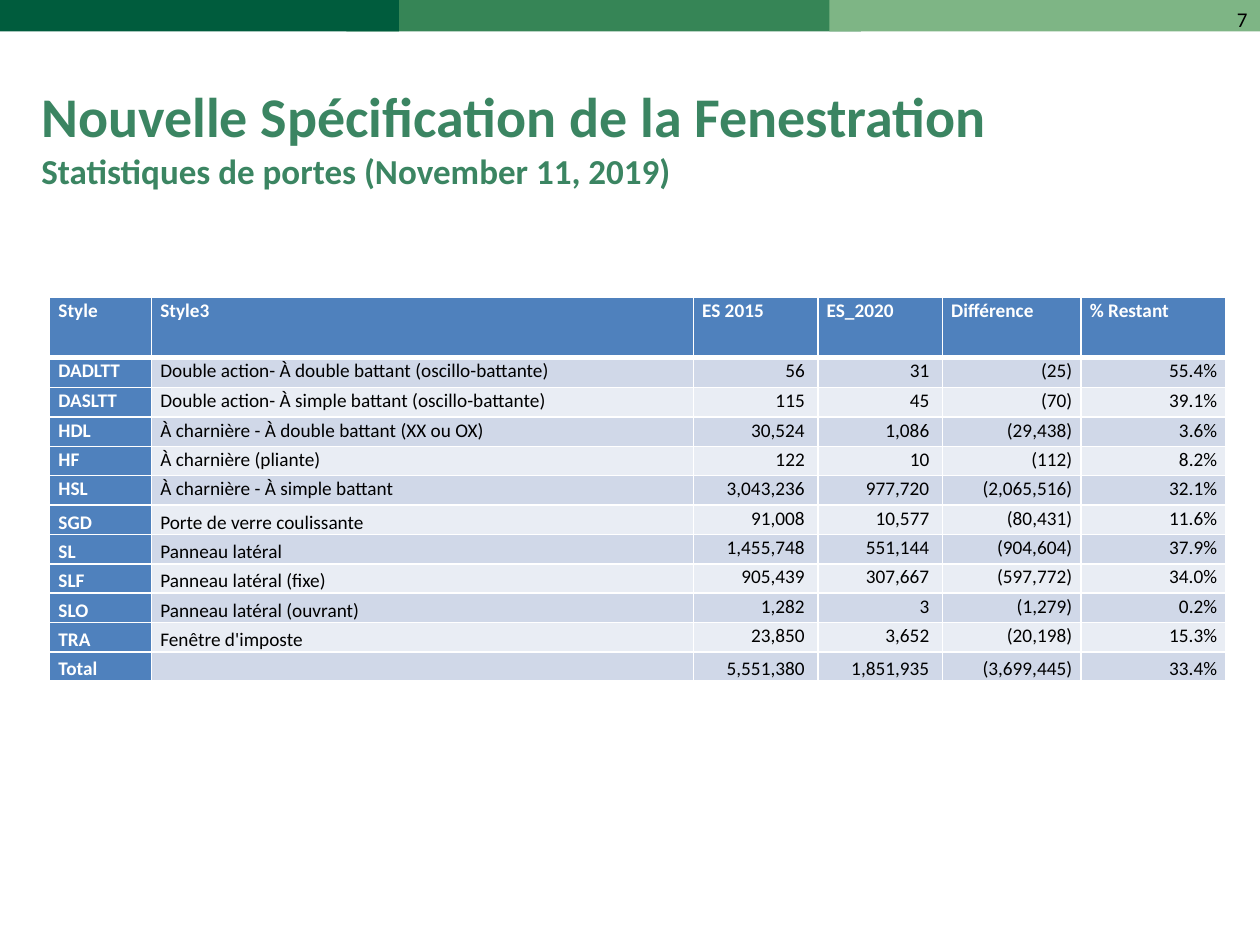
from lxml.etree import SubElement
from pptx import Presentation
from pptx.dml.color import RGBColor
from pptx.enum.shapes import MSO_SHAPE as Shape
from pptx.enum.text import MSO_ANCHOR as Anchor, PP_ALIGN as Align
from pptx.oxml.ns import qn
from pptx.util import Pt

COLORS = {
    "dark green": "005C3D", "mid green": "368556", "light green": "7EB585",
    "title": "3B8562", "header": "4F81BD", "odd": "D0D8E8", "even": "E9EDF4",
    "white": "FFFFFF", "black": "000000",
}
BANDS = [("mid green", 198, 294), ("dark green", 0, 228), ("light green", 474, 246)]
COLUMN_WIDTHS = [58.2, 309.6, 71.2, 71.2, 79.2, 82.8]
HEADINGS = ["Style", "Style3", "ES 2015", "ES_2020", "Différence", "% Restant"]
DOORS = [
    ["DADLTT", "Double action- À double battant (oscillo-battante)", "56", "31", "(25)", "55.4%"],
    ["DASLTT", "Double action- À simple battant (oscillo-battante)", "115", "45", "(70)", "39.1%"],
    ["HDL", "À charnière - À double battant (XX ou OX)", "30,524", "1,086", "(29,438)", "3.6%"],
    ["HF", "À charnière (pliante)", "122", "10", "(112)", "8.2%"],
    ["HSL", "À charnière - À simple battant", "3,043,236", "977,720", "(2,065,516)", "32.1%"],
    ["SGD", "Porte de verre coulissante", "91,008", "10,577", "(80,431)", "11.6%"],
    ["SL", "Panneau latéral", "1,455,748", "551,144", "(904,604)", "37.9%"],
    ["SLF", "Panneau latéral (fixe)", "905,439", "307,667", "(597,772)", "34.0%"],
    ["SLO", "Panneau latéral (ouvrant)", "1,282", "3", "(1,279)", "0.2%"],
    ["TRA", "Fenêtre d'imposte", "23,850", "3,652", "(20,198)", "15.3%"],
    ["Total", "", "5,551,380", "1,851,935", "(3,699,445)", "33.4%"],
]
FIRST_BOTTOM_ROW = 6
TOTAL_ROW = len(DOORS)


def rgb(color):
    return RGBColor.from_string(COLORS[color])


def apply_format(target, formats):
    for attribute, value in formats.items():
        setattr(target, attribute, value)


def add_run(paragraph, words, size, color, bold=False):
    run = paragraph.add_run()
    run.text = words
    apply_format(run.font, {"name": "Calibri", "size": Pt(size), "bold": bold})
    run.font.color.rgb = rgb(color)


def add_band(slide, color, left, width):
    band = slide.shapes.add_shape(Shape.RECTANGLE, Pt(left), 0, Pt(width), Pt(18))
    band.shadow.inherit = False
    band.fill.solid()
    band.fill.fore_color.rgb = rgb(color)
    band.line.fill.background()


def add_text(slide, bounds, align, anchor, lines):
    frame = slide.shapes.add_textbox(*map(Pt, bounds)).text_frame
    apply_format(frame, {"word_wrap": True, "vertical_anchor": anchor})
    paragraph = frame.paragraphs[0]
    paragraph.alignment = align
    for index, line in enumerate(lines):
        if index:
            paragraph.add_line_break()
        add_run(paragraph, *line)


def add_borders(cell, row):
    widths = {"lnL": 1, "lnR": 1, "lnT": 3 if row == 1 else 1, "lnB": 3 if row == 0 else 1}
    properties = cell._tc.get_or_add_tcPr()
    for side, width in widths.items():
        border = SubElement(properties, qn(f"a:{side}"), w=str(Pt(width)))
        fill = SubElement(border, qn("a:solidFill"))
        SubElement(fill, qn("a:srgbClr"), val=COLORS["white"])


def fill_cell(cell, words, row, column):
    is_heading = row == 0 or column == 0
    is_number = row > 0 and column > 1
    at_bottom = row == TOTAL_ROW or (row >= FIRST_BOTTOM_ROW and not is_number)
    apply_format(cell, {
        "margin_left": Pt(5),
        "margin_right": Pt(7.5 if is_number and column < 4 else 5),
        "margin_top": 0,
        "margin_bottom": 0,
        "vertical_anchor": Anchor.BOTTOM if at_bottom else Anchor.TOP,
    })
    add_borders(cell, row)
    cell.fill.solid()
    cell.fill.fore_color.rgb = rgb("header" if is_heading else "odd" if row % 2 else "even")
    paragraph = cell.text_frame.paragraphs[0]
    apply_format(paragraph, {
        "alignment": Align.RIGHT if is_number else Align.LEFT,
        "line_spacing": 1.07,
    })
    if words:
        add_run(paragraph, words, 11, "white" if is_heading else "black", is_heading)
    else:
        SubElement(paragraph._p, qn("a:endParaRPr"), sz="1100")


def add_door_table(slide):
    rows = [HEADINGS] + DOORS
    heights = [34.2, 17.3] + [16.8] * (len(rows) - 2)
    table = slide.shapes.add_table(
        len(rows), len(HEADINGS), Pt(28.4), Pt(170),
        Pt(sum(COLUMN_WIDTHS)), Pt(sum(heights))).table
    apply_format(table, {"first_row": False, "horz_banding": False})
    for column, width in zip(table.columns, COLUMN_WIDTHS):
        column.width = Pt(width)
    for row, (height, values) in enumerate(zip(heights, rows)):
        table.rows[row].height = Pt(height)
        for column, words in enumerate(values):
            fill_cell(table.cell(row, column), words, row, column)


def main():
    deck = Presentation()
    apply_format(deck, {"slide_width": Pt(720), "slide_height": Pt(540)})
    slide = deck.slides.add_slide(deck.slide_layouts[6])
    for band in BANDS:
        add_band(slide, *band)
    add_text(slide, (552, 0, 168, 37.5), Align.RIGHT, Anchor.TOP, [("7", 12, "black")])
    add_text(slide, (16.5, 33, 685, 90), Align.LEFT, Anchor.MIDDLE, [
        ("Nouvelle Spécification de la Fenestration", 32, "title", True),
        ("Statistiques de portes (November 11, 2019)", 20, "title", True),
    ])
    add_door_table(slide)
    deck.save("out.pptx")


if __name__ == "__main__":
    main()
